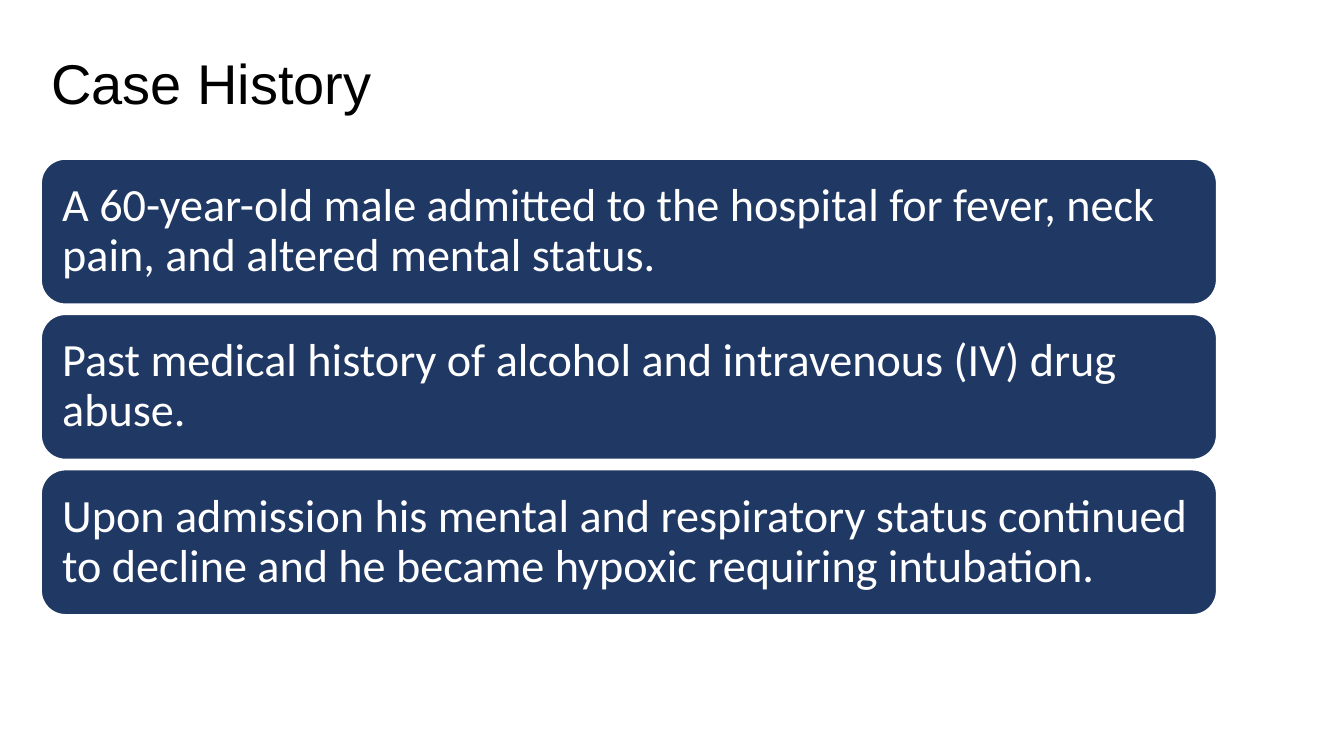
import pptx
import pptx.util
import pptx.dml.color
import pptx.enum.shapes
import pptx.enum.text

Cm = pptx.util.Cm
COLORS = {"navy": "203864", "white": "FFFFFF", "black": "000000"}
HISTORY = [
    "A 60-year-old male admitted to the hospital for fever, neck pain, and altered mental status.",
    "Past medical history of alcohol and intravenous (IV) drug abuse.",
    "Upon admission his mental and respiratory status continued to decline and he became hypoxic requiring intubation.",
]


def rgb(name):
    return pptx.dml.color.RGBColor.from_string(COLORS[name])


def write_text(tf, text, font, size, color, spacing=1.0, wrap=True):
    tf.word_wrap = wrap
    tf.vertical_anchor = pptx.enum.text.MSO_ANCHOR.MIDDLE
    p = tf.paragraphs[0]
    p.alignment = pptx.enum.text.PP_ALIGN.LEFT
    p.line_spacing = spacing
    r = p.add_run()
    r.text = text
    r.font.name = font
    r.font.size = pptx.util.Pt(size)
    r.font.color.rgb = rgb(color)


def add_title(s, left, top, width, height, text):
    sp = s.shapes.title
    sp.left, sp.top, sp.width, sp.height = Cm(left), Cm(top), Cm(width), Cm(height)
    write_text(sp.text_frame, text, font="Arial", size=40, color="black", wrap=False)
    sp.text_frame.auto_size = pptx.enum.text.MSO_AUTO_SIZE.SHAPE_TO_FIT_TEXT


def add_history(s, left, top, width, height, items, gap=0.26):
    card_height = (height - gap * (len(items) - 1)) / len(items)
    for i, text in enumerate(items):
        sp = s.shapes.add_shape(
            pptx.enum.shapes.MSO_SHAPE.ROUNDED_RECTANGLE,
            Cm(left), Cm(top + i * (card_height + gap)), Cm(width), Cm(card_height))
        sp.shadow.inherit = False
        sp.fill.solid()
        sp.fill.fore_color.rgb = rgb("navy")
        sp.line.color.rgb = rgb("white")
        sp.line.width = pptx.util.Pt(1)
        tf = sp.text_frame
        tf.margin_left = tf.margin_right = tf.margin_top = tf.margin_bottom = Cm(0.35)
        write_text(tf, text, font="Calibri", size=33, color="white", spacing=0.9)


def main():
    prs = pptx.Presentation()
    prs.slide_width, prs.slide_height = Cm(33.87), Cm(19.05)
    s = prs.slides.add_slide(prs.slide_layouts[5])
    add_title(s, 1.04, 1.09, 8.66, 1.96, "Case History")
    add_history(s, 1.04, 4.01, 29.62, 11.48, HISTORY)
    prs.save("out.pptx")


if __name__ == "__main__":
    main()
